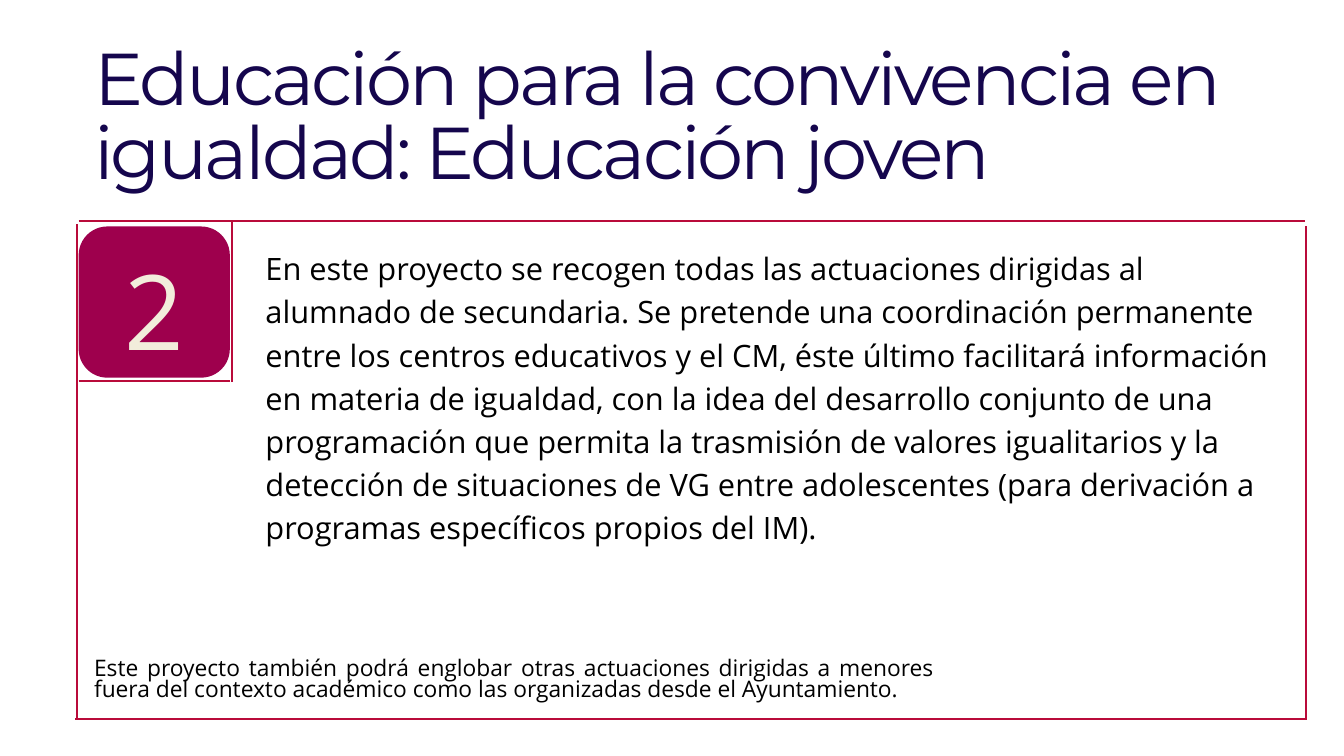
from lxml import etree
from pptx import Presentation
from pptx.dml.color import RGBColor
from pptx.enum.shapes import MSO_CONNECTOR, MSO_SHAPE
from pptx.enum.text import PP_ALIGN
from pptx.oxml.ns import qn
from pptx.util import Inches, Pt

COLORS = {"title": "15064D", "badge": "9E004D", "number": "F2EDDB",
          "text": "000000", "rule": "B90B3A"}

prs = Presentation()
prs.slide_width, prs.slide_height = Inches(20), Inches(11.25)
s = prs.slides.add_slide(prs.slide_layouts[6])


def add_text(text, *, box, size, leading, color, font="Open Sans",
             align=PP_ALIGN.LEFT, tracking=None):
    """Add a text box; leading is in points, tracking in hundredths of a point."""
    tf = s.shapes.add_textbox(*map(Inches, box)).text_frame
    tf.word_wrap = True
    tf.margin_left = tf.margin_top = tf.margin_right = tf.margin_bottom = 0
    p = tf.paragraphs[0]
    p.alignment = align
    p.line_spacing = Pt(leading)
    r = p.add_run()
    r.text = text
    r.font.name = font
    r.font.size = Pt(size)
    r.font.color.rgb = RGBColor.from_string(COLORS[color])
    if tracking is not None:
        r.font._element.set("spc", str(tracking))


add_text("Educación para la convivencia en igualdad: Educación joven",
         box=(1.4, 0.7, 17.26, 2.22), size=78.6, leading=78.6,
         color="title", font="Montserrat", tracking=-310)

# Numbered badge
badge = s.shapes.add_shape(MSO_SHAPE.ROUNDED_RECTANGLE, Inches(1.17),
                           Inches(3.37), Inches(2.25), Inches(2.25))
badge.adjustments[0] = 0.19
badge.shadow.inherit = False
badge.fill.solid()
badge.fill.fore_color.rgb = RGBColor.from_string(COLORS["badge"])
badge.line.fill.background()
add_text("2", box=(0.66, 3.36, 3.27, 2.04), size=111.8, leading=156.5,
         color="number", align=PP_ALIGN.CENTER)

add_text("En este proyecto se recogen todas las actuaciones dirigidas al "
         "alumnado de secundaria. Se pretende una coordinación permanente "
         "entre los centros educativos y el CM, éste último facilitará "
         "información en materia de igualdad, con la idea del desarrollo "
         "conjunto de una programación que permita la trasmisión de valores "
         "igualitarios y la detección de situaciones de VG entre adolescentes "
         "(para derivación a programas específicos propios del IM).",
         box=(3.95, 3.63, 14.94, 5.06), size=33, leading=46.2, color="text")

# Frame around the content and the badge: x1, y1, x2, y2
rules = [
    (1.14, 10.71, 1.14, 3.33),
    (3.45, 5.68, 3.45, 3.28),
    (19.43, 10.68, 19.43, 3.36),
    (1.17, 3.29, 19.42, 3.29),
    (1.17, 5.67, 3.42, 5.67),
    (1.12, 10.7, 19.45, 10.7),
]
for ends in rules:
    rule = s.shapes.add_connector(MSO_CONNECTOR.STRAIGHT, *map(Inches, ends))
    rule.line.width = Pt(2.25)
    rule.line.color.rgb = RGBColor.from_string(COLORS["rule"])
    etree.SubElement(rule._element.spPr, qn("a:effectLst"))

add_text("Este proyecto también podrá englobar otras actuaciones dirigidas a "
         "menores fuera del contexto académico como las organizadas desde el "
         "Ayuntamiento.",
         box=(1.4, 9.83, 12.49, 0.62), size=24.4, leading=22.2,
         color="text", align=PP_ALIGN.JUSTIFY)

prs.save("out.pptx")
